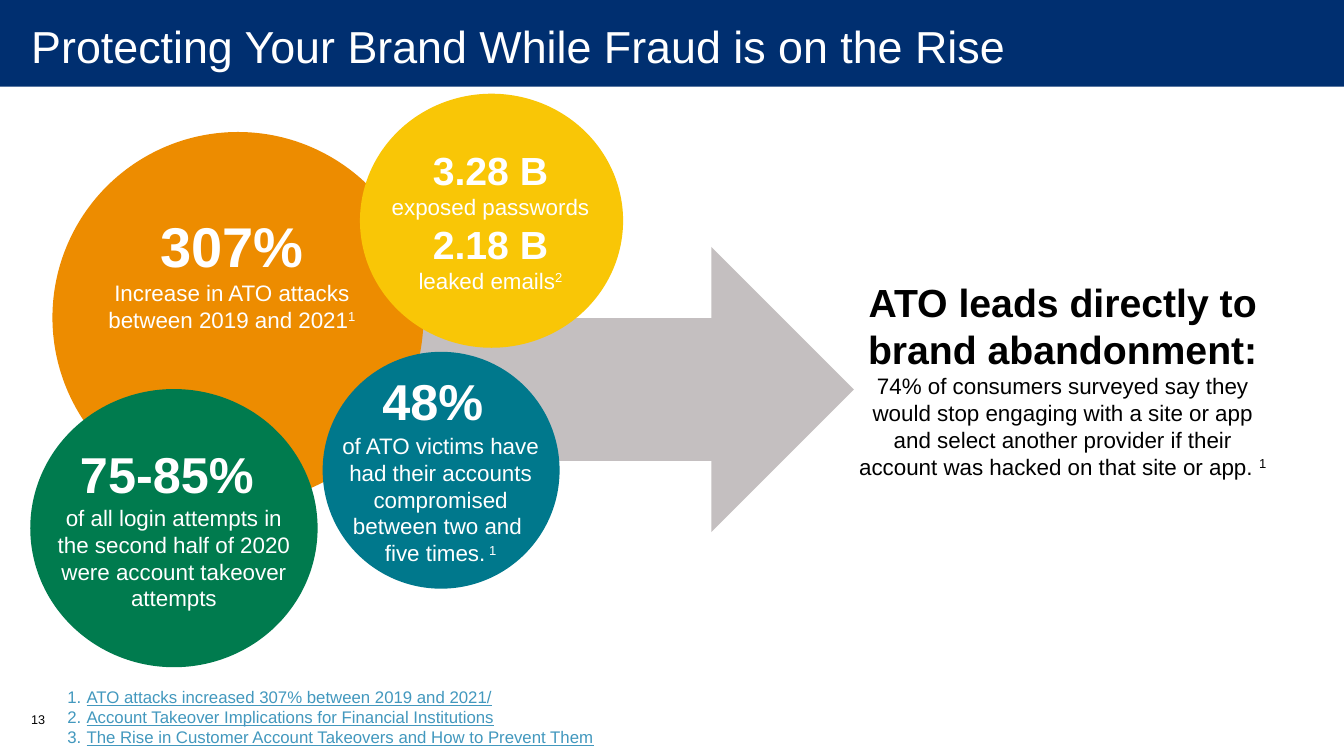
import dataclasses
import typing

import lxml.etree
import pptx
import pptx.dml.color
import pptx.enum.shapes
import pptx.enum.text
import pptx.oxml.ns
import pptx.util

Inches = pptx.util.Inches
Pt = pptx.util.Pt
Color = pptx.dml.color.RGBColor.from_string
Align = pptx.enum.text.PP_ALIGN
Preset = pptx.enum.shapes.MSO_SHAPE
qn = pptx.oxml.ns.qn


@dataclasses.dataclass(frozen=True)
class Theme:
    font: str = "Arial"
    navy: str = "002F70"
    gray: str = "C4BFC0"
    orange: str = "ED8C00"
    yellow: str = "F9C606"
    teal: str = "00788C"
    green: str = "007B4E"
    link: str = "4298BE"
    white: str = "FFFFFF"
    black: str = "000000"
    title: int = 32
    hero: int = 40
    figure: int = 36
    heading: int = 28
    body: int = 16
    source: int = 12
    number: int = 9


THEME = Theme()


class Box(typing.NamedTuple):
    left: float
    top: float
    width: float
    height: float

    def inside(self, left, top, width, height):
        return Box(self.left + left, self.top + top, width, height)

    def lengths(self):
        return [Inches(value) for value in self]


class Line(typing.NamedTuple):
    text: str
    size: int
    bold: bool = False
    raised: str = ""
    spacer: int = 0


def style(font, size, color, bold=False):
    font.name = THEME.font
    font.size = Pt(size)
    font.bold = bold
    font.color.rgb = Color(color)


def add_shape(shapes, preset, box, color):
    shape = shapes.add_shape(preset, *box.lengths())
    shape.shadow.inherit = False
    shape.fill.solid()
    shape.fill.fore_color.rgb = Color(color)
    shape.line.fill.background()
    return shape


def add_spans(para, line):
    for index, part in enumerate(line.text.split("\n")):
        if index:
            para.add_line_break()
        para.add_run().text = part
    if line.spacer:
        span = para.add_run()
        span.text = " "
        span.font.size = Pt(line.spacer)
    if line.raised:
        span = para.add_run()
        span.text = line.raised
        span.font._element.set("baseline", "30000")


def add_text(shapes, box, lines, color, align=Align.CENTER):
    frame = shapes.add_textbox(*box.lengths()).text_frame
    frame.word_wrap = True
    frame.auto_size = pptx.enum.text.MSO_AUTO_SIZE.SHAPE_TO_FIT_TEXT
    for index, line in enumerate(lines):
        para = frame.add_paragraph() if index else frame.paragraphs[0]
        para.alignment = align
        add_spans(para, line)
        style(para.font, line.size, color, line.bold)
    return frame


def add_header(page, box, text):
    title = page.shapes.title
    banner = add_shape(page.shapes, Preset.RECTANGLE, box, THEME.navy)
    title.element.addprevious(banner.element)
    title.left, title.top, title.width, title.height = box.inside(
        0.01, -0.03, box.width, 0.97).lengths()
    frame = title.text_frame
    frame.text = text
    frame.word_wrap = True
    frame.auto_size = pptx.enum.text.MSO_AUTO_SIZE.NONE
    frame.vertical_anchor = pptx.enum.text.MSO_ANCHOR.MIDDLE
    frame.margin_left, frame.margin_right = Inches(0.3), Inches(0.2)
    frame.margin_top = frame.margin_bottom = 0
    frame.paragraphs[0].alignment = Align.LEFT
    style(frame.paragraphs[0].font, THEME.title, THEME.white)


def add_bubble(page, box, color, caption, lines):
    group = page.shapes.add_group_shape()
    add_shape(group.shapes, Preset.OVAL, box, color)
    add_text(group.shapes, box.inside(*caption), lines, THEME.white)


def add_statistics(page, box):
    size = THEME
    add_shape(page.shapes, Preset.RIGHT_ARROW, box.inside(2.71, 1.52, 5.46, 2.83), THEME.gray)
    add_bubble(page, box.inside(0.22, 0.38, 3.68, 3.68), THEME.orange, (0.14, 0.74, 3.28, 1.31), [
        Line("307%", size.hero, True),
        Line("Increase in ATO attacks between 2019 and 2021", size.body, raised="1"),
    ])
    add_bubble(page, box.inside(2.9, 2.56, 2.35, 2.35), THEME.teal, (0, 0.08, 2.34, 2.12), [
        Line("48%", size.figure, True, spacer=size.hero),
        Line("of ATO victims have had their accounts compromised between two and \nfive times.",
             size.body, raised=" 1"),
    ])
    add_bubble(page, box.inside(3.27, 0, 2.61, 2.52), THEME.yellow, (-0.02, 0.47, 2.63, 1.58), [
        Line("3.28 B", size.heading, True),
        Line("exposed passwords", size.body),
        Line("2.18 B", size.heading, True),
        Line("leaked emails", size.body, raised="2"),
    ])
    add_bubble(page, box.inside(0, 2.93, 2.85, 2.76), THEME.green, (0.11, 0.49, 2.63, 1.78), [
        Line("75-85% ", size.figure, True),
        Line("of all login attempts in the second half of 2020 were account takeover attempts",
             size.body),
    ])


def add_conclusion(page, box):
    add_text(page.shapes, box, [
        Line("ATO leads directly to brand abandonment:", THEME.heading, True),
        Line("74% of consumers surveyed say they would stop engaging with a site or app and "
             "select another provider if their account was hacked on that site or app. ",
             THEME.body, raised="1"),
    ], THEME.black)


def add_footer(page, box, number, sources):
    add_text(page.shapes, box.inside(0, 0.25, 0.49, 0.4),
             [Line(number, THEME.number)], THEME.black, Align.LEFT)
    lines = [Line(source, THEME.source) for source in sources]
    frame = add_text(page.shapes, box.inside(0.36, 0, 6.67, box.height),
                     lines, THEME.link, Align.LEFT)
    for para in frame.paragraphs:
        properties = para._p.get_or_add_pPr()
        properties.set("marL", str(Inches(0.19)))
        properties.set("indent", str(Inches(-0.19)))
        bullet = lxml.etree.Element(qn("a:buAutoNum"), type="arabicPeriod")
        properties.insert(0, bullet)
        for span in para.runs:
            span.font.underline = True


def main():
    deck = pptx.Presentation()
    deck.slide_width, deck.slide_height = Inches(13.33), Inches(7.5)
    page = deck.slides.add_slide(deck.slide_layouts.get_by_name("Title Only"))
    add_header(page, Box(0, 0, 13.33, 0.86), "Protecting Your Brand While Fraud is on the Rise")
    add_statistics(page, Box(0.3, 0.93, 8.17, 5.69))
    add_conclusion(page, Box(8.39, 2.71, 4.3, 2.12))
    add_footer(page, Box(0.21, 6.76, 7.03, 0.7), "13", [
        "ATO attacks increased 307% between 2019 and 2021/",
        "Account Takeover Implications for Financial Institutions",
        "The Rise in Customer Account Takeovers and How to Prevent Them",
    ])
    deck.save("out.pptx")


if __name__ == "__main__":
    main()
